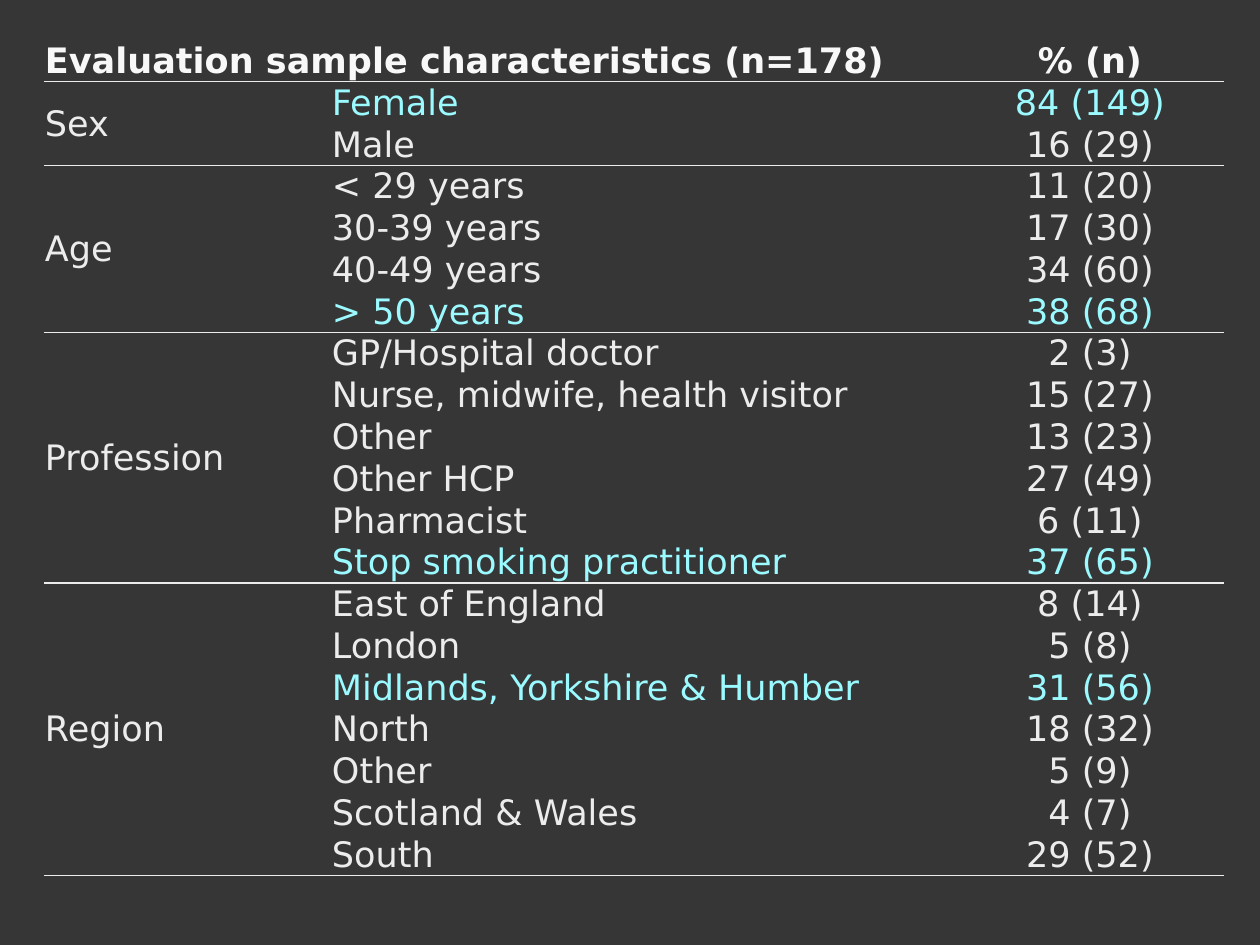
import pptx
import pptx.dml.color
import pptx.enum.shapes
import pptx.enum.text
import pptx.oxml
import pptx.oxml.ns
import pptx.util
from dataclasses import dataclass


@dataclass(frozen=True)
class Theme:
    back: str = "333333"
    panel: str = "363636"
    head: str = "F8F8F8"
    text: str = "ECECEC"
    high: str = "9BFAFF"
    rule: str = "ECECEC"
    font: str = "DejaVu Sans"
    size: int = 20
    line: int = 1


SCALE = 914400 / 126
WIDE, HIGH = 1260, 945
NO_STYLE = "{2D5ABB26-0587-4C30-8999-92F81FD0307C}"

HEAD = ("Evaluation sample characteristics (n=178)", "% (n)")
GROUPS = {
    "Sex": [("Female", "84 (149)"), ("Male", "16 (29)")],
    "Age": [("< 29 years", "11 (20)"), ("30-39 years", "17 (30)"),
            ("40-49 years", "34 (60)"), ("> 50 years", "38 (68)")],
    "Profession": [("GP/Hospital doctor", "2 (3)"),
                   ("Nurse, midwife, health visitor", "15 (27)"),
                   ("Other", "13 (23)"), ("Other HCP", "27 (49)"),
                   ("Pharmacist", "6 (11)"),
                   ("Stop smoking practitioner", "37 (65)")],
    "Region": [("East of England", "8 (14)"), ("London", "5 (8)"),
               ("Midlands, Yorkshire & Humber", "31 (56)"),
               ("North", "18 (32)"), ("Other", "5 (9)"),
               ("Scotland & Wales", "4 (7)"), ("South", "29 (52)")],
}
TOPS = {"Female", "> 50 years", "Stop smoking practitioner",
        "Midlands, Yorkshire & Humber"}


def px(n):
    return pptx.util.Emu(round(n * SCALE))


def rgb(code):
    return pptx.dml.color.RGBColor.from_string(code)


class Deck:
    def __init__(self, theme):
        self.theme = theme
        self.file = pptx.Presentation()
        self.file.slide_width, self.file.slide_height = px(WIDE), px(HIGH)
        self.slide = self.file.slides.add_slide(self.file.slide_layouts[6])
        fill = self.slide.background.fill
        fill.solid()
        fill.fore_color.rgb = rgb(theme.back)

    def panel(self, x, y, w, h):
        kind = pptx.enum.shapes.MSO_SHAPE.RECTANGLE
        box = self.slide.shapes.add_shape(kind, px(x), px(y), px(w), px(h))
        box.shadow.inherit = False
        box.fill.solid()
        box.fill.fore_color.rgb = rgb(self.theme.panel)
        box.line.fill.background()

    def table(self, x, y, cols, rows, tall, h):
        frame = self.slide.shapes.add_table(
            rows, len(cols), px(x), px(y), px(sum(cols)), px(h))
        grid = frame.table
        grid.first_row = grid.horz_banding = False
        style = grid._tbl.tblPr.find(pptx.oxml.ns.qn("a:tableStyleId"))
        style.text = NO_STYLE
        for col, w in zip(grid.columns, cols):
            col.width = px(w)
        for row in grid.rows:
            row.height = px(tall)
        frame.height = px(h)
        return grid

    def cell(self, cell, text, color, top, base, mid=False, bold=False):
        look = self.theme
        cell.margin_left = cell.margin_right = cell.margin_top = px(1)
        cell.margin_bottom = 0
        cell.vertical_anchor = pptx.enum.text.MSO_ANCHOR.MIDDLE
        # Borders come before the fill in the cell properties
        for side, on in (("L", False), ("R", False), ("T", top), ("B", base)):
            paint = (f'<a:solidFill><a:srgbClr val="{look.rule}"/></a:solidFill>'
                     if on else "<a:noFill/>")
            cell._tc.get_or_add_tcPr().append(pptx.oxml.parse_xml(
                f'<a:ln{side} {pptx.oxml.ns.nsdecls("a")} '
                f'w="{pptx.util.Pt(look.line)}">{paint}</a:ln{side}>'))
        cell.fill.background()
        cell.text = text
        para = cell.text_frame.paragraphs[0]
        align = pptx.enum.text.PP_ALIGN
        para.alignment = align.CENTER if mid else align.LEFT
        font = para.font
        font.name, font.size, font.bold = look.font, pptx.util.Pt(look.size), bold
        font.color.rgb = rgb(color)


def main():
    look = Theme()
    deck = Deck(look)
    deck.panel(0, 0, WIDE, HIGH)

    # Header row
    count = 1 + sum(len(items) for items in GROUPS.values())
    grid = deck.table(44, 40, (287, 625, 268), count, 39, 866)
    for col, text in enumerate((HEAD[0], "", HEAD[1])):
        deck.cell(grid.cell(0, col), text, look.head, False, True,
                  mid=col == 2, bold=True)
    grid.cell(0, 0).merge(grid.cell(0, 1))

    # Groups: a rule above, below, and under the first item
    row = 1
    for group, items in GROUPS.items():
        last = row + len(items) - 1
        for at, (name, value) in enumerate(items, row):
            first, end = at == row, at == last
            color = look.high if name in TOPS else look.text
            deck.cell(grid.cell(at, 0), group if first else "", look.text,
                      first, first or end)
            deck.cell(grid.cell(at, 1), name, color, first, first or end)
            deck.cell(grid.cell(at, 2), value, color, first, first or end,
                      mid=True)
        grid.cell(row, 0).merge(grid.cell(last, 0))
        row = last + 1

    deck.file.save("out.pptx")


if __name__ == "__main__":
    main()
